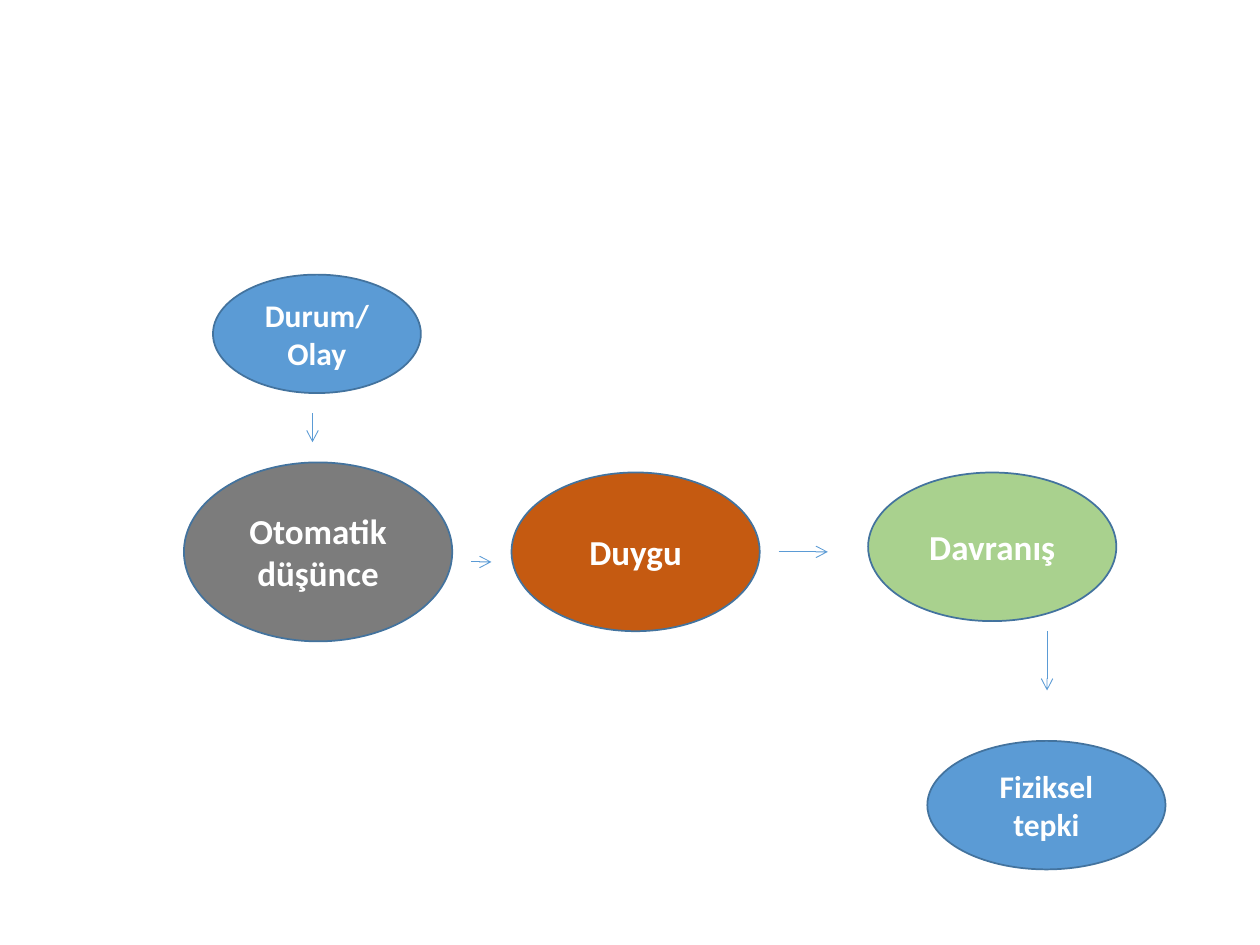
"""Build a slide that links an event to thought, emotion, behaviour and physical response."""
from lxml import etree
from pptx import Presentation
from pptx.dml.color import RGBColor
from pptx.enum import shapes, text
from pptx.oxml.ns import qn
from pptx.util import Inches, Pt


def tint(code):
    """Turn a hex string into a colour."""
    return RGBColor.from_string(code)


deck = Presentation()
deck.slide_width, deck.slide_height = Inches(10), Inches(7.5)
slide = deck.slides.add_slide(deck.slide_layouts[6])

nodes = [
    ("Otomatik düşünce", 1.46, 3.67, 2.13, 1.42, "7C7C7C", 20),
    ("Duygu", 4.06, 3.75, 1.97, 1.26, "C55A11", 20),
    ("Davranış", 6.89, 3.75, 1.97, 1.18, "A9D18E", 20),
    ("Durum/Olay", 1.69, 2.18, 1.65, 0.94, "5B9BD5", 18),
    ("Fiziksel tepki", 7.36, 5.88, 1.89, 1.02, "5B9BD5", 18),
]
for label, left, top, width, height, fill, size in nodes:
    node = slide.shapes.add_shape(
        shapes.MSO_SHAPE.OVAL, Inches(left), Inches(top), Inches(width), Inches(height))
    node.shadow.inherit = False
    node.fill.solid()
    node.fill.fore_color.rgb = tint(fill)
    node.line.color.rgb = tint("43739E")
    node.line.width = Pt(1)
    frame = node.text_frame
    frame.text = label
    frame.word_wrap = True
    frame.vertical_anchor = text.MSO_ANCHOR.MIDDLE
    line = frame.paragraphs[0]
    line.alignment = text.PP_ALIGN.CENTER
    font = line.runs[0].font
    font.name, font.size, font.bold = "Calibri", Pt(size), True
    font.color.rgb = tint("FFFFFF")

arrows = [
    (2.48, 3.28, 2.48, 3.51),
    (3.74, 4.46, 3.9, 4.46),
    (6.18, 4.38, 6.57, 4.38),
    (8.31, 5.01, 8.31, 5.48),
]
for ends in arrows:
    arrow = slide.shapes.add_connector(
        shapes.MSO_CONNECTOR.STRAIGHT, *[Inches(end) for end in ends])
    arrow.line.color.rgb = tint("5B9BD5")
    arrow.line.width = Pt(0.5)
    etree.SubElement(arrow.line._get_or_add_ln(), qn("a:tailEnd"), type="arrow")
    etree.SubElement(arrow._element.spPr, qn("a:effectLst"))

deck.save("out.pptx")
